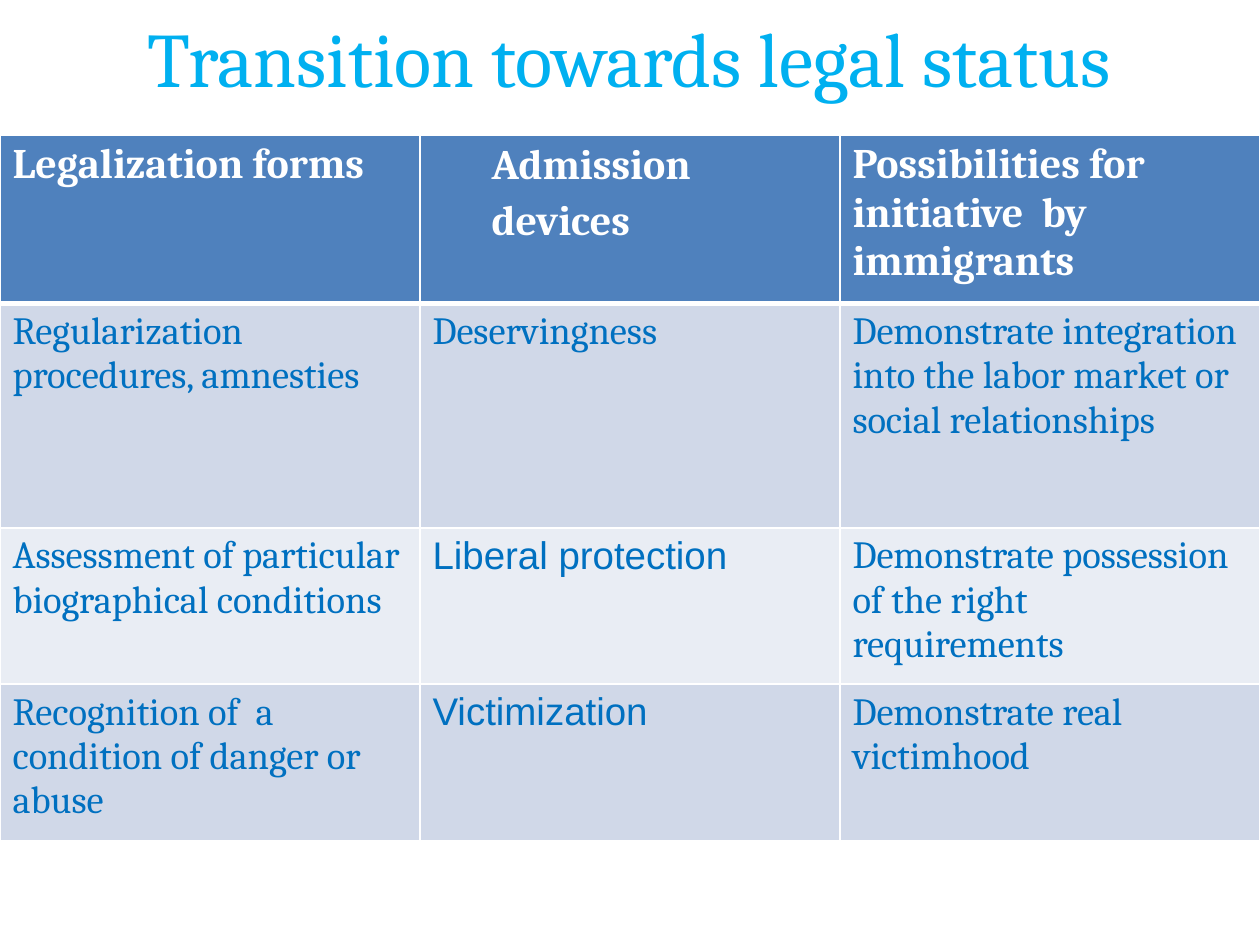
from dataclasses import dataclass

from lxml import etree
from pptx import Presentation
from pptx.dml.color import RGBColor
from pptx.enum.text import MSO_ANCHOR, PP_ALIGN
from pptx.oxml.ns import qn
from pptx.util import Inches, Pt

CENTER, JUSTIFY = PP_ALIGN.CENTER, PP_ALIGN.JUSTIFY
MIDDLE = MSO_ANCHOR.MIDDLE
TITLE_ONLY = 5


@dataclass(frozen=True)
class Theme:
    """Colours, fonts and type sizes of the slide."""

    title: str = "00B0F0"
    header_fill: str = "4F81BD"
    header_text: str = "FFFFFF"
    body_text: str = "0070C0"
    bands: tuple = ("D0D8E8", "E9EDF4")
    border: str = "FFFFFF"
    serif: str = "Cambria"
    sans: str = "Arial"
    title_size: int = 44
    header_size: int = 24
    body_size: int = 22


THEME = Theme()
TITLE = "Transition towards legal status"
HEADERS = ("Legalization forms", "Admission devices",
           "Possibilities for initiative  by immigrants")
PATHWAYS = (
    ("Regularization procedures, amnesties", "Deservingness",
     "Demonstrate integration into the labor market or social relationships"),
    ("Assessment of particular biographical conditions", "Liberal protection",
     "Demonstrate possession of the right requirements"),
    ("Recognition of  a condition of danger or abuse", "Victimization",
     "Demonstrate real victimhood"),
)
SANS_ENTRIES = {"Liberal protection", "Victimization"}
ROW_HEIGHTS = (1.34, 1.78, 1.24, 1.24)


def apply_format(target, values):
    """Set each attribute named in values on target."""
    for name, value in values.items():
        setattr(target, name, value)


def style_text(paragraph, name, size, color, bold=False):
    """Give a paragraph's runs their typeface, size, weight and colour."""
    for run in paragraph.runs:
        apply_format(run.font, {"name": name, "size": Pt(size), "bold": bold})
        run.font.color.rgb = RGBColor.from_string(color)


def add_title(slide):
    """Place the slide title across the top."""
    title = slide.shapes.title
    apply_format(title, {"left": Inches(0.5), "top": Inches(0),
                         "width": Inches(9), "height": Inches(0.9)})
    title.text_frame.text = TITLE
    apply_format(title.text_frame, {"word_wrap": True, "vertical_anchor": MIDDLE})
    heading = title.text_frame.paragraphs[0]
    heading.alignment = CENTER
    style_text(heading, THEME.serif, THEME.title_size, THEME.title)


def set_borders(cell, bottom):
    """Draw the cell's borders, with the bottom one in its own width."""
    properties = cell._tc.get_or_add_tcPr()
    for side, width in (("L", 1), ("R", 1), ("T", 1), ("B", bottom)):
        line = etree.SubElement(properties, qn(f"a:ln{side}"), w=str(Pt(width)))
        fill = etree.SubElement(line, qn("a:solidFill"))
        etree.SubElement(fill, qn("a:srgbClr"), val=THEME.border)


def fill_cell(cell, text, fill, bottom=1, **type_style):
    """Write and style one table cell."""
    cell.text = text
    style_text(cell.text_frame.paragraphs[0], **type_style)
    set_borders(cell, bottom)
    cell.fill.solid()
    cell.fill.fore_color.rgb = RGBColor.from_string(fill)


def indent_header(cell):
    """Indent and justify a heading with looser lines."""
    apply_format(cell, {"margin_left": Inches(0.07), "margin_right": Inches(0.07),
                        "margin_top": 0, "margin_bottom": 0})
    heading = cell.text_frame.paragraphs[0]
    apply_format(heading, {"alignment": JUSTIFY, "line_spacing": 1.15})
    properties = heading._p.get_or_add_pPr()
    properties.set("marL", str(Inches(0.5)))
    properties.set("indent", "0")


def add_pathway_table(slide):
    """Add the table of legalization forms, devices and initiatives."""
    table = slide.shapes.add_table(
        len(ROW_HEIGHTS), len(HEADERS), Inches(0), Inches(1.07),
        Inches(10), Inches(sum(ROW_HEIGHTS))).table
    for row, height in zip(table.rows, ROW_HEIGHTS):
        row.height = Inches(height)
    for column, header in enumerate(HEADERS):
        fill_cell(table.cell(0, column), header, THEME.header_fill, bottom=3,
                  name=THEME.serif, size=THEME.header_size,
                  color=THEME.header_text, bold=True)
    indent_header(table.cell(0, 1))
    for index, pathway in enumerate(PATHWAYS):
        band = THEME.bands[index % len(THEME.bands)]
        for column, entry in enumerate(pathway):
            typeface = THEME.sans if entry in SANS_ENTRIES else THEME.serif
            fill_cell(table.cell(index + 1, column), entry, band,
                      name=typeface, size=THEME.body_size, color=THEME.body_text)


def main():
    """Build and save the slide."""
    presentation = Presentation()
    apply_format(presentation, {"slide_width": Inches(10),
                                "slide_height": Inches(7.5)})
    slide = presentation.slides.add_slide(presentation.slide_layouts[TITLE_ONLY])
    add_title(slide)
    add_pathway_table(slide)
    presentation.save("out.pptx")


if __name__ == "__main__":
    main()
